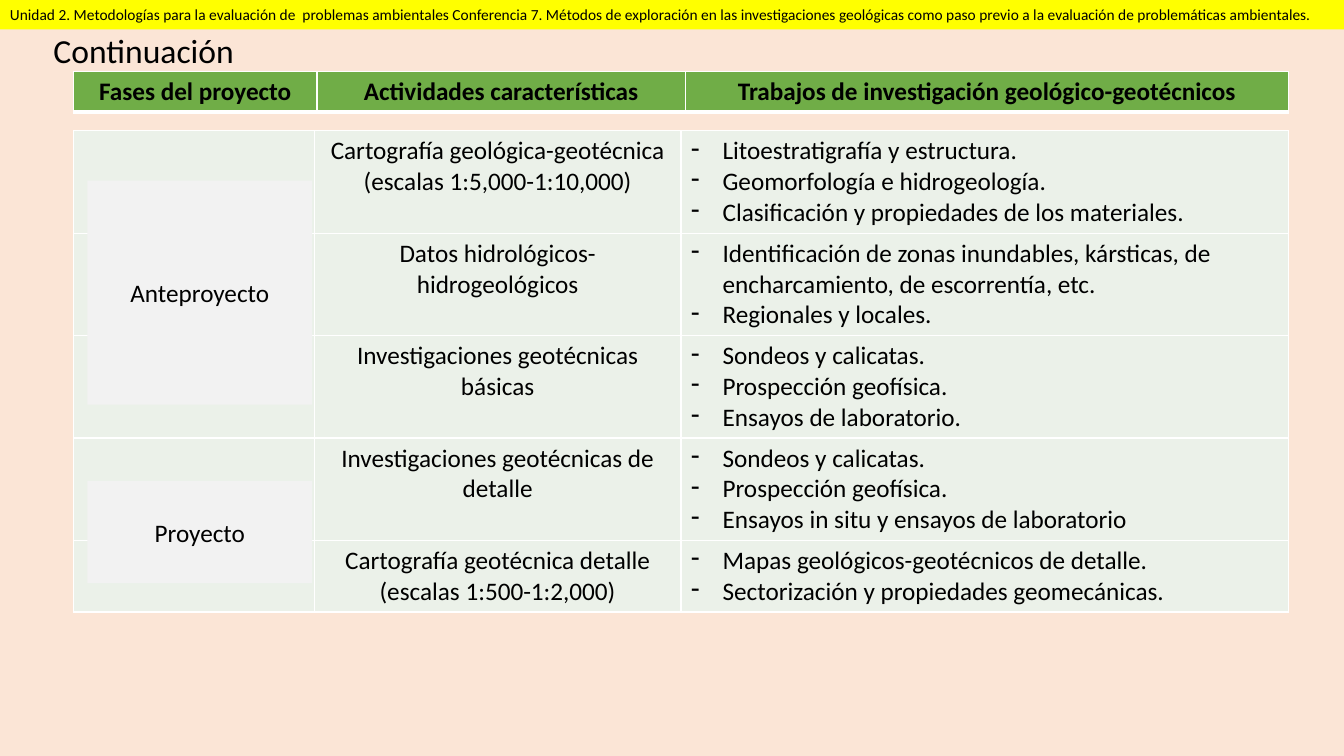
from dataclasses import dataclass
from lxml.etree import SubElement
from pptx import Presentation
from pptx.dml.color import RGBColor
from pptx.enum.shapes import MSO_SHAPE
from pptx.enum.text import MSO_ANCHOR, MSO_AUTO_SIZE, PP_ALIGN
from pptx.oxml import parse_xml
from pptx.oxml.ns import nsdecls, qn
from pptx.util import Pt

BANNER = (
    "Unidad 2. Metodologías para la evaluación de  problemas ambientales "
    "Conferencia 7. Métodos de exploración en las investigaciones geológicas "
    "como paso previo a la evaluación de problemáticas ambientales."
)
TITLE = "Continuación"
HEADINGS = [
    "Fases del proyecto",
    "Actividades características",
    "Trabajos de investigación geológico-geotécnicos",
]
ACTIVITIES = [
    (["Cartografía geológica-geotécnica", "(escalas 1:5,000-1:10,000)"],
     ["Litoestratigrafía y estructura.", "Geomorfología e hidrogeología.",
      "Clasificación y propiedades de los materiales."]),
    (["Datos hidrológicos-hidrogeológicos"],
     ["Identificación de zonas inundables, kársticas, de encharcamiento, de escorrentía, etc.",
      "Regionales y locales."]),
    (["Investigaciones geotécnicas básicas"],
     ["Sondeos y calicatas.", "Prospección geofísica.", "Ensayos de laboratorio."]),
    (["Investigaciones geotécnicas de detalle"],
     ["Sondeos y calicatas.", "Prospección geofísica.",
      "Ensayos in situ y ensayos de laboratorio"]),
    (["Cartografía geotécnica detalle", "(escalas 1:500-1:2,000)"],
     ["Mapas geológicos-geotécnicos de detalle.",
      "Sectorización y propiedades geomecánicas."]),
]
PHASES = [("Anteproyecto", 129, 160), ("Proyecto", 343.5, 73)]


@dataclass(frozen=True)
class Theme:
    font: str = "Calibri"
    text: str = "000000"
    background: str = "FBE5D6"
    banner: str = "FFFF00"
    heading: str = "70AD47"
    cell: str = "EBF1E9"
    phase: str = "F2F2F2"
    border: str = "FFFFFF"
    banner_size: int = 11
    body_size: int = 18
    title_size: int = 24


THEME = Theme()
SLIDE_WIDTH, SLIDE_HEIGHT = 960, 540
TABLE_LEFT = 52.5
HEADING_TOP, BODY_TOP = 51, 93.5
HEADING_WIDTHS = [174, 263, 431]
BODY_WIDTHS = [172, 262, 434]
HEADING_HEIGHT = 28.5
BODY_HEIGHTS = [73.1] * 4 + [51.1]
DASH_INDENT = 22.5


def paint(fill, color):
    fill.solid()
    fill.fore_color.rgb = RGBColor.from_string(color)


def write(frame, lines, size, align, bold=False, dashed=False):
    for number, line in enumerate(lines):
        paragraph = frame.add_paragraph() if number else frame.paragraphs[0]
        paragraph.text = line
        paragraph.alignment = align
        paragraph.line_spacing = 1.0
        if dashed:
            properties = paragraph._p.get_or_add_pPr()
            properties.set("marL", str(Pt(DASH_INDENT)))
            properties.set("indent", str(-Pt(DASH_INDENT)))
            SubElement(properties, qn("a:buChar"), char="-")
        paragraph.font.name = THEME.font
        paragraph.font.size = Pt(size)
        paragraph.font.bold = bold
        paragraph.font.color.rgb = RGBColor.from_string(THEME.text)


def add_box(shapes, words, left, top, width, height, color, size, align):
    box = shapes.add_shape(MSO_SHAPE.RECTANGLE, Pt(left), Pt(top), Pt(width), Pt(height))
    box.shadow.inherit = False
    paint(box.fill, color)
    box.line.fill.background()
    box.text_frame.word_wrap = True
    box.text_frame.vertical_anchor = MSO_ANCHOR.MIDDLE
    write(box.text_frame, [words], size, align)


def add_grid(shapes, top, widths, heights, color, bottom_border):
    grid = shapes.add_table(
        len(heights), len(widths), Pt(TABLE_LEFT), Pt(top), Pt(sum(widths)), Pt(sum(heights))
    ).table
    grid.first_row = grid.horz_banding = False
    for column, width in zip(grid.columns, widths):
        column.width = Pt(width)
    for row, height in zip(grid.rows, heights):
        row.height = Pt(height)
    for cell in grid.iter_cells():
        paint(cell.fill, color)
        borders = {"lnL": 1, "lnR": 1, "lnT": 1, "lnB": bottom_border}
        for position, (side, weight) in enumerate(borders.items()):
            cell._tc.get_or_add_tcPr().insert(position, parse_xml(
                f'<a:{side} {nsdecls("a")} w="{Pt(weight)}"><a:solidFill>'
                f'<a:srgbClr val="{THEME.border}"/></a:solidFill></a:{side}>'
            ))
    return grid


def main():
    presentation = Presentation()
    presentation.slide_width, presentation.slide_height = Pt(SLIDE_WIDTH), Pt(SLIDE_HEIGHT)
    slide = presentation.slides.add_slide(presentation.slide_layouts[5])
    paint(slide.background.fill, THEME.background)
    shapes = slide.shapes

    title = shapes.title
    title.left, title.top, title.width, title.height = Pt(31), Pt(17.5), Pt(145), Pt(36)
    title.text_frame.auto_size = MSO_AUTO_SIZE.NONE
    title.text_frame.word_wrap = False
    title.text_frame.vertical_anchor = MSO_ANCHOR.TOP
    write(title.text_frame, [TITLE], THEME.title_size, PP_ALIGN.LEFT)

    body = add_grid(shapes, BODY_TOP, BODY_WIDTHS, BODY_HEIGHTS, THEME.cell, 1)
    for row, (activity, works) in enumerate(ACTIVITIES):
        write(body.cell(row, 1).text_frame, activity, THEME.body_size, PP_ALIGN.CENTER)
        write(body.cell(row, 2).text_frame, works, THEME.body_size, PP_ALIGN.LEFT, dashed=True)

    for phase, top, height in PHASES:
        add_box(shapes, phase, 62.5, top, 160.5, height,
                THEME.phase, THEME.body_size, PP_ALIGN.CENTER)

    header = add_grid(shapes, HEADING_TOP, HEADING_WIDTHS, [HEADING_HEIGHT], THEME.heading, 3)
    for column, heading in enumerate(HEADINGS):
        write(header.cell(0, column).text_frame, [heading],
              THEME.body_size, PP_ALIGN.CENTER, bold=True)

    add_box(shapes, BANNER, 0, 0, SLIDE_WIDTH, 21,
            THEME.banner, THEME.banner_size, PP_ALIGN.LEFT)
    presentation.save("out.pptx")


if __name__ == "__main__":
    main()
